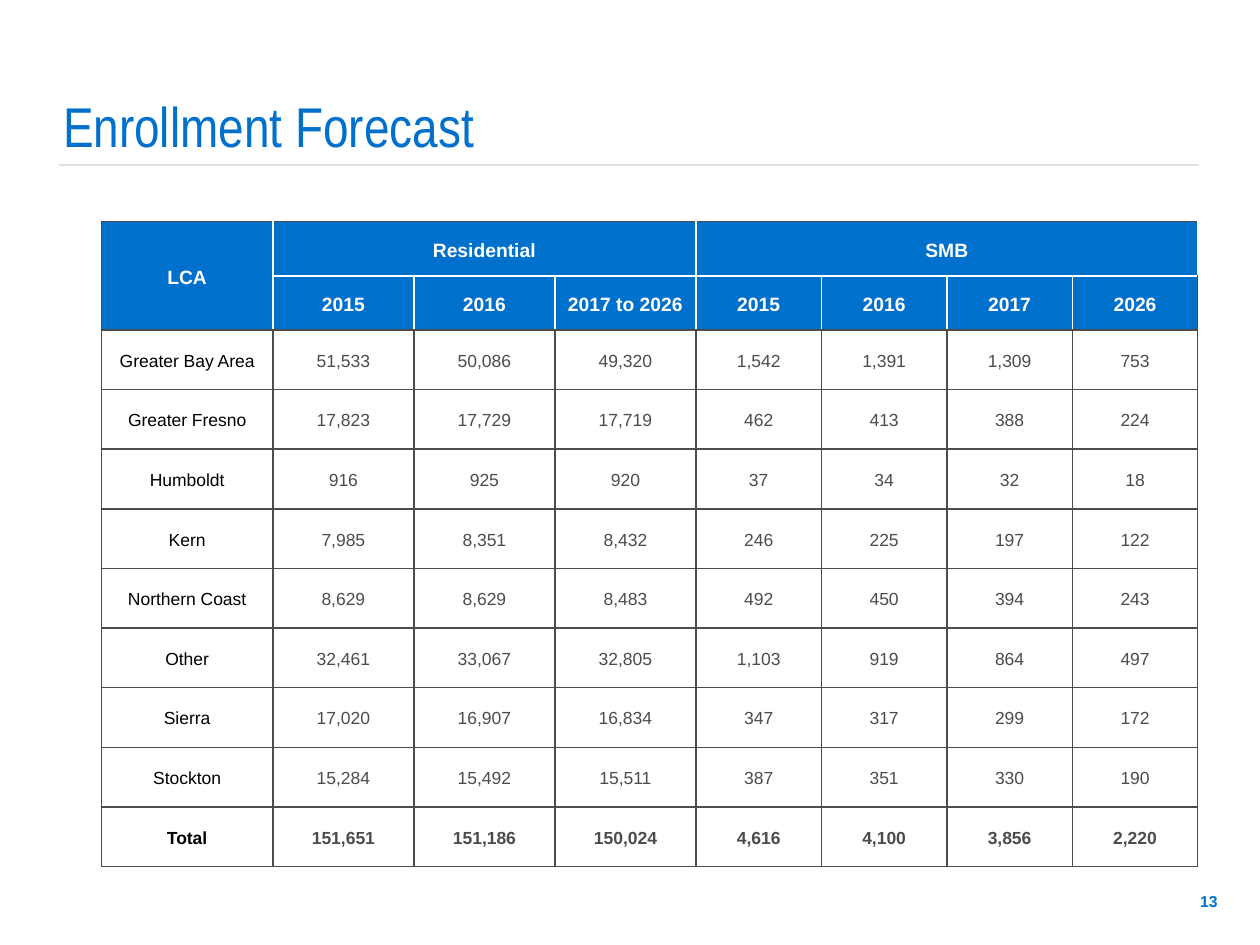
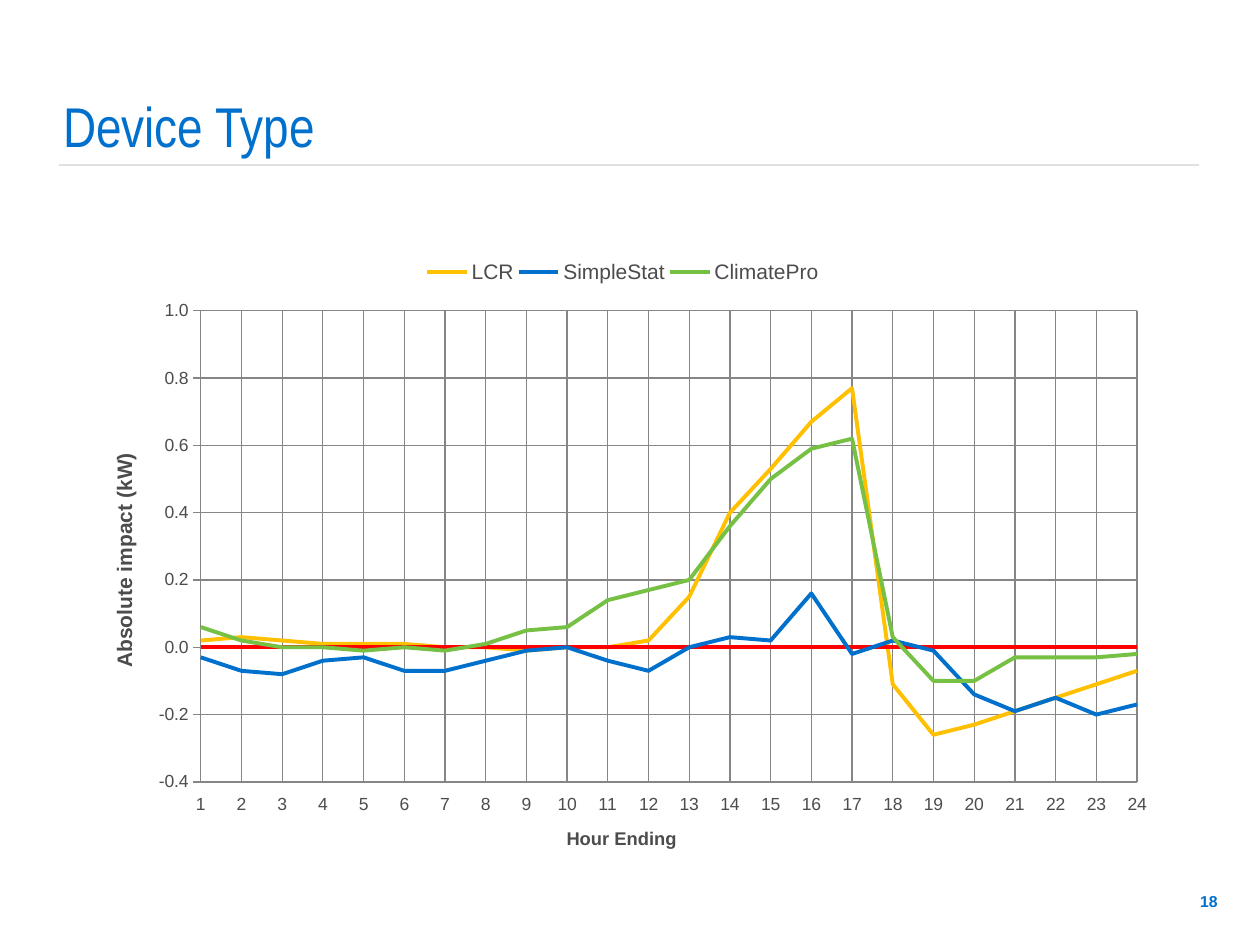
import pptx
import pptx.chart.data
import pptx.dml.color
import pptx.enum.chart
import pptx.enum.shapes
import pptx.enum.text
import pptx.oxml
import pptx.oxml.ns
import pptx.util
from lxml import etree

BLUE, GRAY, WHITE, BLACK = "0070CD", "4C4C4C", "FFFFFF", "000000"
RULE, GRID = "E0E0E0", "868686"
BODY_FONT, TITLE_FONT = "Arial", "Arial Narrow"

FORECAST = {"title": "Enrollment Forecast", "number": "13"}
HEADER_GROUPS = [("LCA", 0, 0, 1, 0), ("Residential", 0, 1, 0, 3), ("SMB", 0, 4, 0, 7)]
HEADER_ROWS = [
    ["LCA", "Residential", "", "", "SMB", "", "", ""],
    ["", "2015", "2016", "2017 to 2026", "2015", "2016", "2017", "2026"],
]
ENROLLMENT_ROWS = [
    ["Greater Bay Area", "51,533", "50,086", "49,320", "1,542", "1,391", "1,309", "753"],
    ["Greater Fresno", "17,823", "17,729", "17,719", "462", "413", "388", "224"],
    ["Humboldt", "916", "925", "920", "37", "34", "32", "18"],
    ["Kern", "7,985", "8,351", "8,432", "246", "225", "197", "122"],
    ["Northern Coast", "8,629", "8,629", "8,483", "492", "450", "394", "243"],
    ["Other", "32,461", "33,067", "32,805", "1,103", "919", "864", "497"],
    ["Sierra", "17,020", "16,907", "16,834", "347", "317", "299", "172"],
    ["Stockton", "15,284", "15,492", "15,511", "387", "351", "330", "190"],
    ["Total", "151,651", "151,186", "150,024", "4,616", "4,100", "3,856", "2,220"],
]
COLUMN_WIDTHS = [98] + [80.6] * 3 + [71.7] * 4
HEADER_HEIGHT, ROW_HEIGHT = 30.9, 34.1
LAST_RESIDENTIAL, FIRST_SMB = 3, 4

DEVICES = {"title": "Device Type", "number": "18"}
HOURS = [str(hour) for hour in range(1, 25)]
DEVICE_SERIES = [
    ("LCR", "FFC000", [0.02, 0.03, 0.02, 0.01, 0.01, 0.01, 0, 0, -0.01, 0, 0, 0.02,
                       0.15, 0.4, 0.53, 0.67, 0.77, -0.11, -0.26, -0.23, -0.19, -0.15, -0.11, -0.07]),
    ("Series 2", "FF0000", [0] * 24),
    ("SimpleStat", BLUE, [-0.03, -0.07, -0.08, -0.04, -0.03, -0.07, -0.07, -0.04, -0.01, 0, -0.04, -0.07,
                          0, 0.03, 0.02, 0.16, -0.02, 0.02, -0.01, -0.14, -0.19, -0.15, -0.2, -0.17]),
    ("ClimatePro", "76C043", [0.06, 0.02, 0, 0, -0.01, 0, -0.01, 0.01, 0.05, 0.06, 0.14, 0.17,
                              0.2, 0.36, 0.5, 0.59, 0.62, 0.03, -0.1, -0.1, -0.03, -0.03, -0.03, -0.02]),
]
ZERO_LINE_INDEX = 1

Pt = pptx.util.Pt
qn = pptx.oxml.ns.qn


def color(value):
    return pptx.dml.color.RGBColor.from_string(value)


def set_all(target, values):
    for name, value in values.items():
        setattr(target, name, value)


def set_font(font, size, value, bold=False, name=BODY_FONT):
    set_all(font, {"name": name, "size": Pt(size), "bold": bold})
    font.color.rgb = color(value)


def set_line(line, value, width):
    line.color.rgb = color(value)
    line.width = Pt(width)


def set_frame(frame, margins, anchor):
    left, top, right, bottom = [Pt(margin) for margin in margins]
    set_all(frame, {"margin_left": left, "margin_top": top, "margin_right": right,
                    "margin_bottom": bottom, "vertical_anchor": anchor})


def write(frame, text, alignment, **font_values):
    paragraph = frame.paragraphs[0]
    paragraph.alignment = alignment
    run = paragraph.add_run()
    run.text = text
    set_font(run.font, **font_values)
    return paragraph


def add_base_slide(presentation, content):
    align = pptx.enum.text.PP_ALIGN
    anchor = pptx.enum.text.MSO_ANCHOR
    slide = presentation.slides.add_slide(presentation.slide_layouts.get_by_name("Title Only"))
    title = slide.shapes.title
    set_all(title, {"left": Pt(36), "top": Pt(41), "width": Pt(648.7), "height": Pt(53.3)})
    set_frame(title.text_frame, (0, 3.6, 7.2, 3.6), anchor.BOTTOM)
    title.text_frame.auto_size = pptx.enum.text.MSO_AUTO_SIZE.NONE
    write(title.text_frame, content["title"], align.LEFT, size=32, value=BLUE, name=TITLE_FONT)

    rule = slide.shapes.add_connector(
        pptx.enum.shapes.MSO_CONNECTOR.STRAIGHT, Pt(33.8), Pt(94.3), Pt(685.4), Pt(94.3))
    set_line(rule.line, RULE, 0.75)
    etree.SubElement(rule.element.spPr, qn("a:effectLst"))

    number = slide.shapes.add_textbox(Pt(656), Pt(500.4), Pt(46.8), Pt(28.8))
    number.text_frame.word_wrap = True
    set_frame(number.text_frame, (7.2, 3.6, 7.2, 3.6), anchor.MIDDLE)
    write(number.text_frame, content["number"], align.RIGHT, size=9, value=BLUE, bold=True)
    return slide


def set_borders(cell, borders):
    properties = cell._tc.get_or_add_tcPr()
    for index, (side, (value, width)) in enumerate(borders.items()):
        properties.insert(index, pptx.oxml.parse_xml(
            f'<a:ln{side} {pptx.oxml.ns.nsdecls("a")} w="{Pt(width)}">'
            f'<a:solidFill><a:srgbClr val="{value}"/></a:solidFill></a:ln{side}>'))


def cell_borders(row, column):
    header = row < len(HEADER_ROWS)
    inner = header and column > 0
    return {
        "L": (WHITE if inner else GRAY, 1.5 if column == FIRST_SMB else 1),
        "R": (WHITE if header and column < len(COLUMN_WIDTHS) - 1 else GRAY,
              1.5 if column == LAST_RESIDENTIAL else 1),
        "T": (WHITE if inner and row == 1 else GRAY, 1),
        "B": (WHITE if inner and row == 0 else GRAY, 1),
    }


def add_enrollment_table(slide):
    rows = HEADER_ROWS + ENROLLMENT_ROWS
    heights = [HEADER_HEIGHT] * len(HEADER_ROWS) + [ROW_HEIGHT] * len(ENROLLMENT_ROWS)
    table = slide.shapes.add_table(
        len(rows), len(COLUMN_WIDTHS), Pt(57.9), Pt(126.7),
        Pt(sum(COLUMN_WIDTHS)), Pt(sum(heights))).table
    for column, width in zip(table.columns, COLUMN_WIDTHS):
        column.width = Pt(width)
    for row, height in zip(table.rows, heights):
        row.height = Pt(height)
    for _, top, left, bottom, right in HEADER_GROUPS:
        table.cell(top, left).merge(table.cell(bottom, right))

    for row, values in enumerate(rows):
        header = row < len(HEADER_ROWS)
        for column, text in enumerate(values):
            cell = table.cell(row, column)
            if header:
                cell.fill.solid()
                cell.fill.fore_color.rgb = color(BLUE)
            else:
                cell.fill.background()
            set_borders(cell, cell_borders(row, column))
            set_frame(cell, (5, 0, 5, 0), pptx.enum.text.MSO_ANCHOR.MIDDLE)
            if text:
                paragraph = write(
                    cell.text_frame, text, pptx.enum.text.PP_ALIGN.CENTER,
                    size=11 if header else 10,
                    value=WHITE if header else GRAY if column else BLACK,
                    bold=header or text == "Total" or values[0] == "Total")
                paragraph.line_spacing = 1.15


def place(element, after, **values):
    for layout in element.findall(qn("c:layout")):
        element.remove(layout)
    layout = etree.Element(qn("c:layout"))
    manual = etree.SubElement(layout, qn("c:manualLayout"))
    for name, value in values.items():
        etree.SubElement(manual, qn("c:" + name)).set("val", str(value))
    previous = element.findall(qn(after)) if after else []
    if previous:
        previous[-1].addnext(layout)
    else:
        element.insert(0, layout)


def format_axis(axis, title, size, x, y):
    axis.has_major_gridlines = True
    set_line(axis.major_gridlines.format.line, GRID, 0.75)
    set_line(axis.format.line, GRID, 0.75)
    axis.major_tick_mark = pptx.enum.chart.XL_TICK_MARK.OUTSIDE
    set_font(axis.tick_labels.font, 10, GRAY)
    write(axis.axis_title.text_frame, title, None, size=size, value=GRAY, bold=True)
    place(axis.axis_title._element, "c:tx", xMode="edge", yMode="edge", x=x, y=y)


def add_device_chart(slide):
    data = pptx.chart.data.CategoryChartData(number_format="0.00")
    data.categories = HOURS
    for name, _, values in DEVICE_SERIES:
        data.add_series(name, values)
    chart = slide.shapes.add_chart(
        pptx.enum.chart.XL_CHART_TYPE.LINE, Pt(49), Pt(118), Pt(620), Pt(375), data).chart
    chart.has_title = False
    set_font(chart.font, 10, GRAY)
    chart.plots[0].vary_by_categories = False
    for series, (_, value, _) in zip(chart.plots[0].series, DEVICE_SERIES):
        series.smooth = False
        series.marker.style = pptx.enum.chart.XL_MARKER_STYLE.NONE
        set_line(series.format.line, value, 2.25)

    format_axis(chart.category_axis, "Hour Ending", 10.5, 0.44, 0.94)
    chart.category_axis.tick_label_position = pptx.enum.chart.XL_TICK_LABEL_POSITION.LOW
    value_axis = chart.value_axis
    format_axis(value_axis, "Absolute impact (kW)", 12, 0.02, 0.37)
    set_all(value_axis, {"minimum_scale": -0.4, "maximum_scale": 1, "major_unit": 0.2})
    set_all(value_axis.tick_labels, {"number_format": "0.0", "number_format_is_linked": False})
    axis_element = value_axis._element
    for existing in axis_element.findall(qn("c:crossBetween")):
        axis_element.remove(existing)
    crossing = etree.Element(qn("c:crossBetween"))
    crossing.set("val", "midCat")
    axis_element.find(qn("c:crosses")).addnext(crossing)

    chart.has_legend = True
    legend = chart.legend
    set_all(legend, {"position": pptx.enum.chart.XL_LEGEND_POSITION.TOP, "include_in_layout": False})
    set_font(legend.font, 12, GRAY)
    entry = etree.Element(qn("c:legendEntry"))
    etree.SubElement(entry, qn("c:idx")).set("val", str(ZERO_LINE_INDEX))
    etree.SubElement(entry, qn("c:delete")).set("val", "1")
    legend._element.find(qn("c:legendPos")).addnext(entry)
    place(legend._element, "c:legendEntry", xMode="edge", yMode="edge", x=0.31, y=0.07, w=0.37, h=0.06)
    place(chart._chartSpace.chart.plotArea, None, layoutTarget="inner",
          xMode="edge", yMode="edge", x=0.106, y=0.159, w=0.863, h=0.718)


def main():
    presentation = pptx.Presentation()
    set_all(presentation, {"slide_width": Pt(720), "slide_height": Pt(540)})
    add_enrollment_table(add_base_slide(presentation, FORECAST))
    add_device_chart(add_base_slide(presentation, DEVICES))
    presentation.save("out.pptx")


if __name__ == "__main__":
    main()
